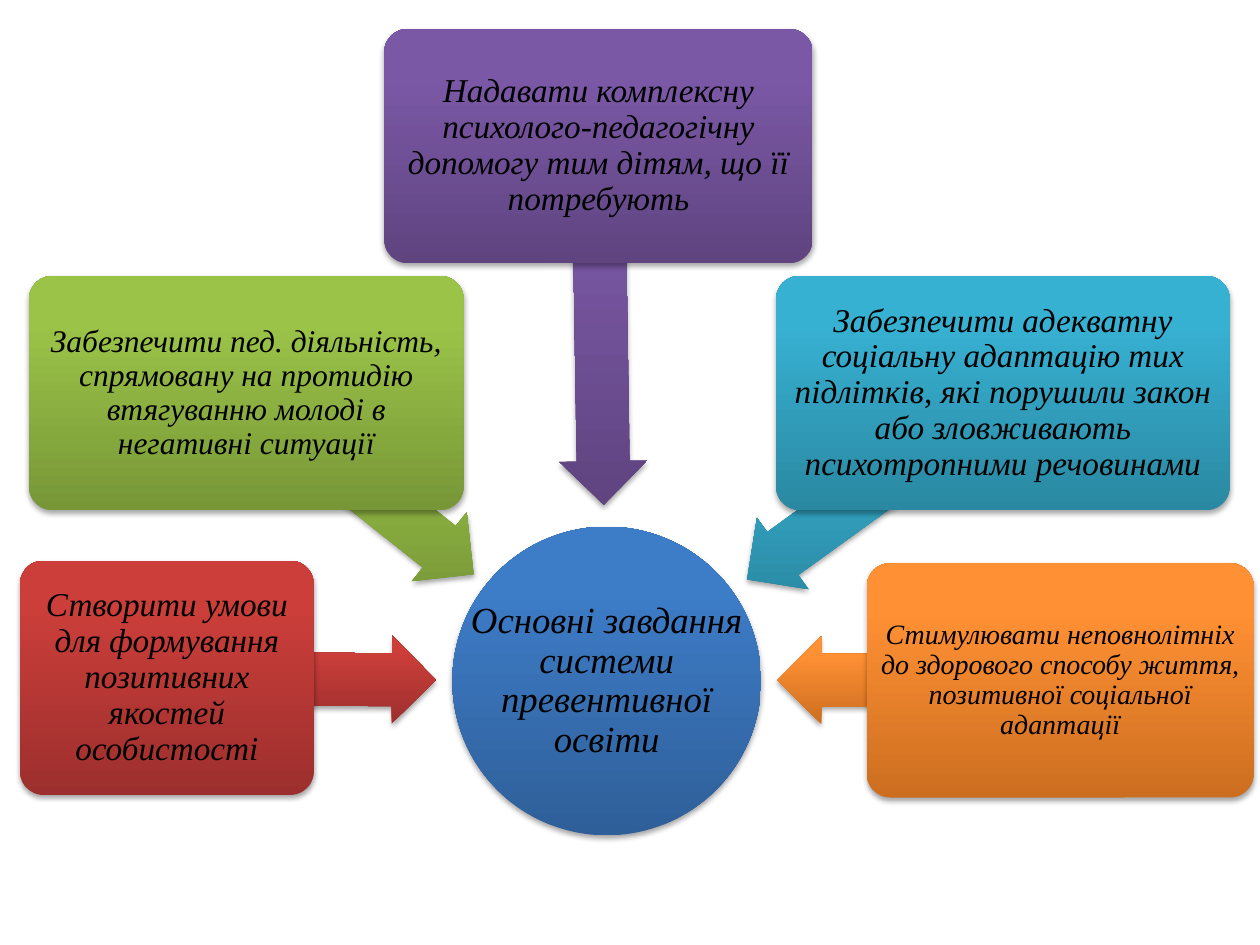
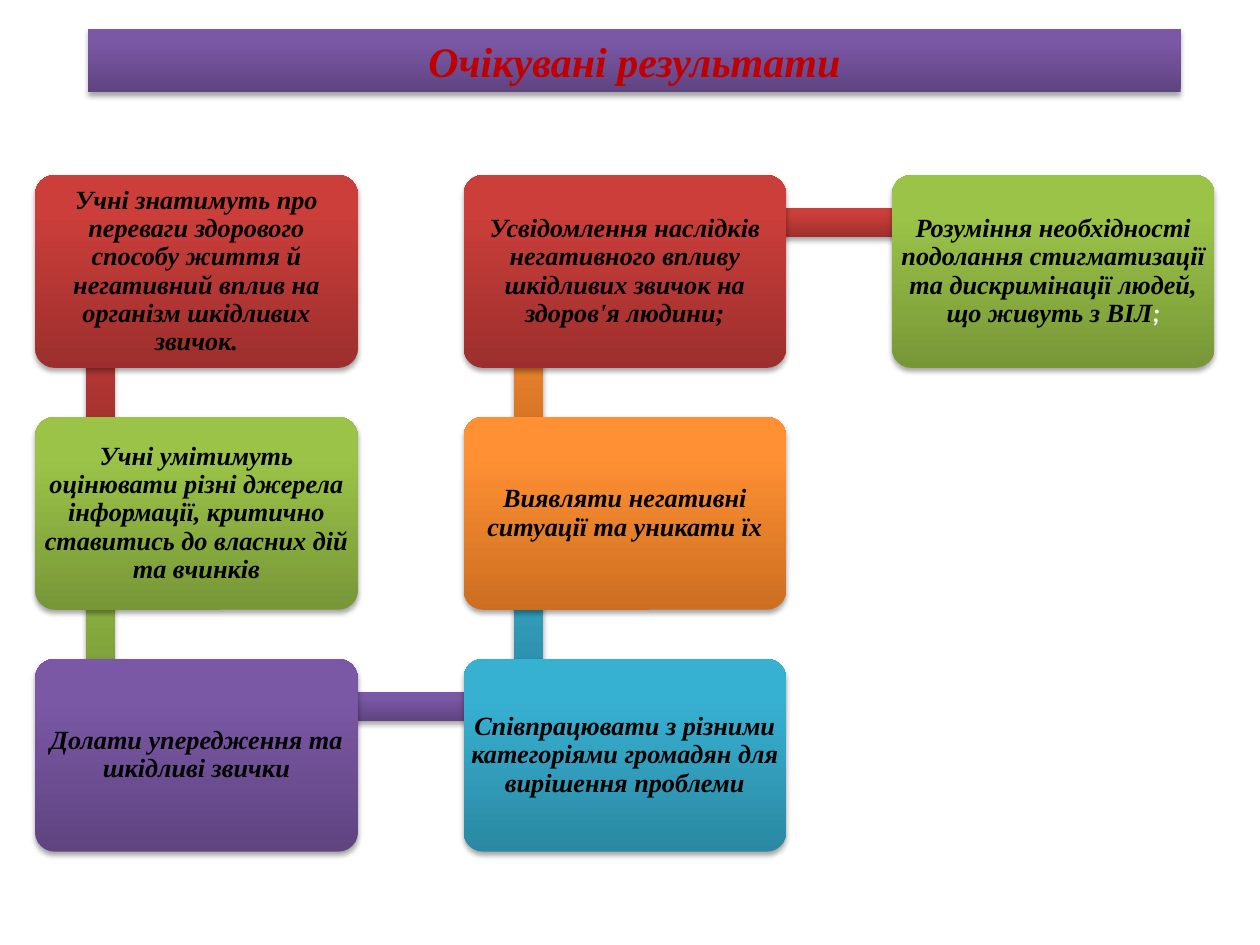
from dataclasses import dataclass
from pptx import Presentation
from pptx.dml.color import RGBColor
from pptx.enum.shapes import MSO_SHAPE
from pptx.enum.text import MSO_ANCHOR, PP_ALIGN
from pptx.oxml import parse_xml
from pptx.oxml.ns import nsdecls, qn
from pptx.util import Inches, Pt


@dataclass(frozen=True)
class Theme:
    blue = ("2F5F99", "3D7CC7")
    red = ("9C2F2D", "CB3E3A")
    green = ("779737", "9BC348")
    purple = ("5F4480", "7B58A6")
    teal = ("2A88A2", "37B1D2")
    orange = ("CC6E20", "FF9034")
    ink = "000000"
    white = "FFFFFF"
    title = "C00000"
    font = "Times New Roman"
    plain = "Calibri"
    head = 24
    core = 21
    large = 19
    mid = 18
    small = 16
    result = 15


SHADOW = (
    f'<a:outerShdw {nsdecls("a")} blurRad="39370" dist="22860" dir="5400000"'
    ' rotWithShape="0"><a:srgbClr val="000000"><a:alpha val="35000"/>'
    "</a:srgbClr></a:outerShdw>"
)


class Deck:
    def __init__(self, theme):
        self.theme = theme
        self.show = Presentation()
        self.show.slide_width = Inches(10)
        self.show.slide_height = Inches(7.5)

    def page(self):
        self.slide = self.show.slides.add_slide(self.show.slide_layouts[6])

    def shape(self, kind, place, tone, turn=0):
        item = self.slide.shapes.add_shape(kind, *map(Inches, place))
        item.rotation = turn
        item.line.fill.background()
        item.fill.gradient()
        item.fill.gradient_angle = 90
        stops = item.fill.gradient_stops
        for stop, spot, color in zip(stops, (0, 0.8), tone):
            stop.position = spot
            stop.color.rgb = RGBColor.from_string(color)
        item.shadow.inherit = False
        props = item._element.spPr
        props.find(qn("a:gradFill")).set("rotWithShape", "0")
        props.find(qn("a:effectLst")).append(parse_xml(SHADOW))
        return item

    def label(self, item, text, size, color=None, bold=False, pad=0.0, tight=0.9):
        frame = item.text_frame
        frame.word_wrap = True
        frame.vertical_anchor = MSO_ANCHOR.MIDDLE
        frame.margin_left = frame.margin_right = Inches(pad)
        frame.margin_top = frame.margin_bottom = Inches(pad)
        para = frame.paragraphs[0]
        para.alignment = PP_ALIGN.CENTER
        para.line_spacing = tight
        self.run(para, text, size, color or self.theme.ink, bold)
        return para

    def run(self, para, text, size, color, bold, face=None):
        run = para.add_run()
        run.text = text
        font = run.font
        font.name = face or self.theme.font
        font.size = Pt(size)
        font.bold = bold
        font.italic = True
        font.color.rgb = RGBColor.from_string(color)

    def card(self, place, tone, text, size, bold=False, pad=0.0):
        item = self.shape(MSO_SHAPE.ROUNDED_RECTANGLE, place, tone)
        item.adjustments[0] = 0.1
        return self.label(item, text, size, bold=bold, pad=pad)

    def arrow(self, place, tone, turn):
        item = self.shape(MSO_SHAPE.LEFT_ARROW, place, tone, turn)
        item.adjustments[0] = 0.6
        item.adjustments[1] = 0.5

    def bar(self, place, tone):
        return self.shape(MSO_SHAPE.RECTANGLE, place, tone)

    def hub(self, place, tone, text, size):
        self.shape(MSO_SHAPE.OVAL, place, tone)
        box = self.slide.shapes.add_textbox(*map(Inches, place))
        self.label(box, text, size, pad=0.01)

    def title(self, place, tone, text):
        item = self.bar(place, tone)
        self.label(item, text, self.theme.head, self.theme.title, True, 0.05, 1.0)


def tasks(deck):
    theme = deck.theme
    deck.page()
    deck.hub((3.59, 4.18, 2.45, 2.45), theme.blue,
             "Основні завдання системи превентивної освіти", theme.core)
    high, thick = 1.86, 0.7
    goals = [
        (theme.red, (1.32, 5.04, 2.14), 180.3, (0.16, 4.45, 2.33), theme.large,
         "Створити умови для формування позитивних якостей особистості"),
        (theme.green, (1.71, 3.49, 2.3), 218.6, (0.23, 2.19, 3.45), theme.mid,
         "Забезпечити пед. діяльність, спрямовану на протидію втягуванню "
         "молоді в негативні ситуації"),
        (theme.purple, (3.35, 2.24, 2.84), 269.1, (3.05, 0.23, 3.4), theme.large,
         "Надавати комплексну психолого-педагогічну допомогу тим дітям, "
         "що її потребують"),
        (theme.teal, (5.69, 3.51, 2.52), 324.1, (6.16, 2.19, 3.6), theme.large,
         "Забезпечити адекватну соціальну адаптацію тих підлітків, які "
         "порушили закон або зловживають психотропними речовинами"),
        (theme.orange, (6.17, 5.05, 2.24), 0, (6.88, 4.47, 3.07), theme.small,
         "Стимулювати неповнолітніх до здорового способу життя, "
         "позитивної соціальної адаптації"),
    ]
    for tone, shaft, turn, box, size, text in goals:
        deck.arrow((*shaft, thick), tone, turn)
        deck.card((*box, high), tone, text, size)


def results(deck):
    theme = deck.theme
    deck.page()
    left, top, wide, high = 0.28, 1.39, 2.56, 1.53
    step, drop, thick = 3.4, 1.92, 0.23
    chain = [
        (0, 0, theme.red, "Учні знатимуть про переваги здорового способу життя "
         "й негативний вплив на організм шкідливих звичок."),
        (0, 1, theme.green, "Учні умітимуть оцінювати різні джерела інформації, "
         "критично ставитись до власних дій та вчинків"),
        (0, 2, theme.purple, "Долати упередження та шкідливі звички"),
        (1, 2, theme.teal, "Співпрацювати з різними категоріями громадян "
         "для вирішення проблеми"),
        (1, 1, theme.orange, "Виявляти негативні ситуації та уникати їх"),
        (1, 0, theme.red, "Усвідомлення наслідків негативного впливу шкідливих "
         "звичок на здоров'я людини;"),
        (2, 0, theme.green, "Розуміння необхідності подолання стигматизації та "
         "дискримінації людей, що живуть з ВІЛ"),
    ]
    for here, (col, row, tone, text) in enumerate(chain):
        x, y = left + col * step, top + row * drop
        if here + 1 < len(chain):
            side, down = chain[here + 1][:2]
            if side > col:
                deck.bar((x + 0.52, y + 0.26, step, thick), tone)
            else:
                start = top + min(row, down) * drop + 0.38
                deck.bar((x + 0.4, start, thick, drop), tone)
        para = deck.card((x, y, wide, high), tone, text, theme.result, True, 0.01)
    deck.run(para, ";", theme.result, theme.white, True, theme.plain)
    deck.title((0.7, 0.23, 8.67, 0.5), theme.purple, "Очікувані результати")


def main():
    deck = Deck(Theme())
    tasks(deck)
    results(deck)
    deck.show.save("out.pptx")


if __name__ == "__main__":
    main()
